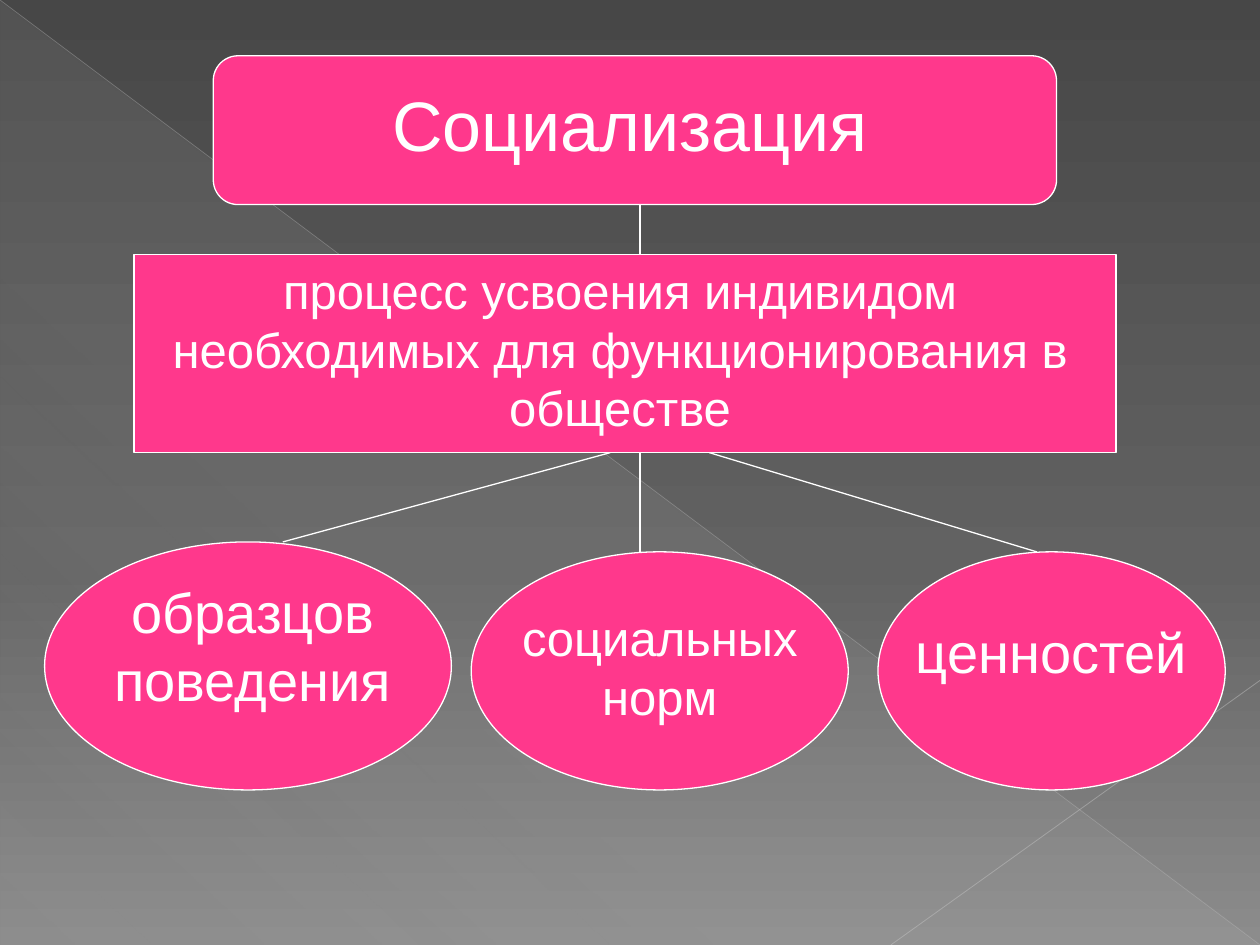
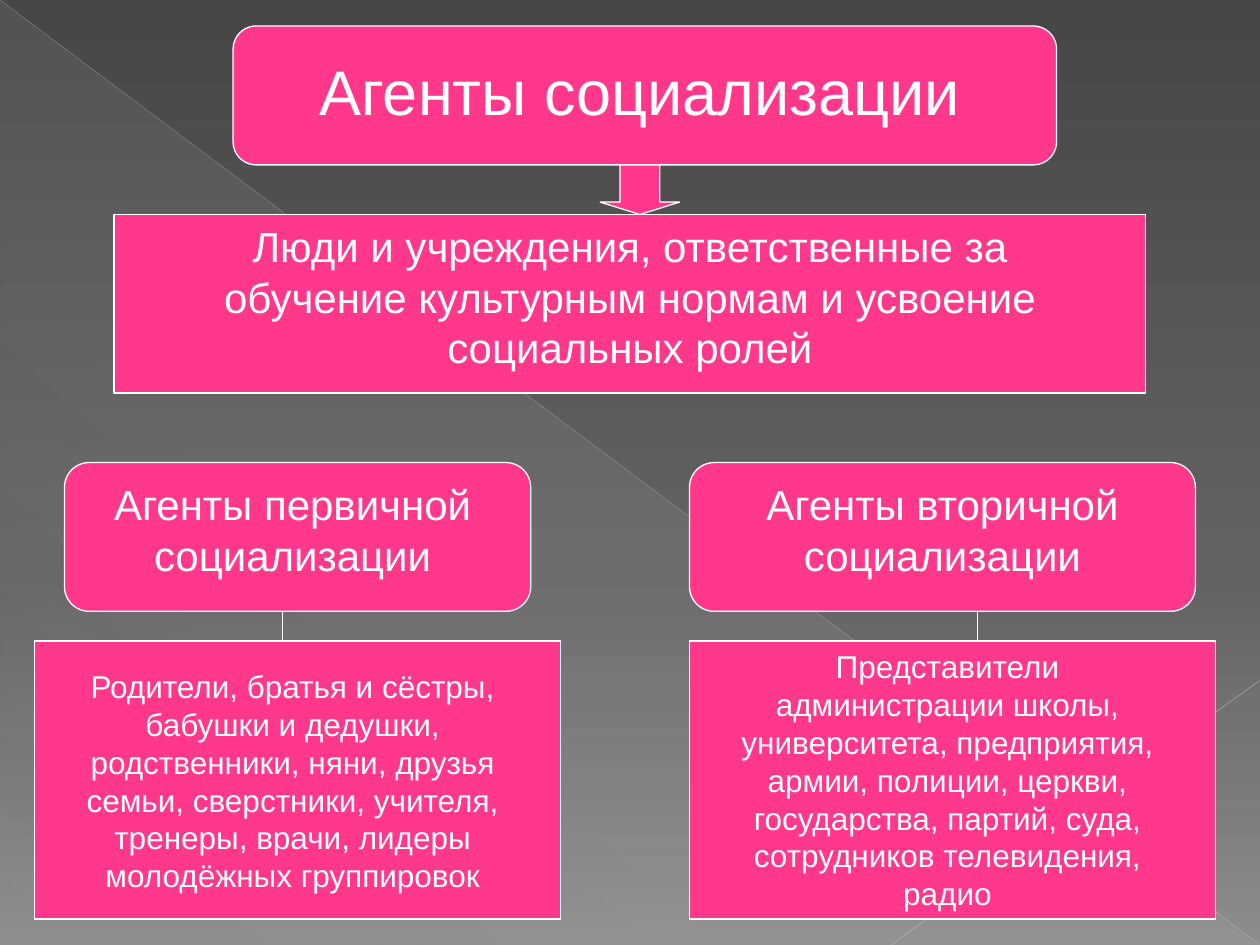
from lxml import etree
from pptx import Presentation
from pptx.dml.color import RGBColor
from pptx.enum.shapes import MSO_CONNECTOR, MSO_SHAPE
from pptx.enum.text import PP_ALIGN
from pptx.oxml.ns import qn
from pptx.util import Inches, Mm, Pt

RECTANGLE = MSO_SHAPE.RECTANGLE
ROUNDED = MSO_SHAPE.ROUNDED_RECTANGLE
ELLIPSE = MSO_SHAPE.OVAL
DOWN_ARROW = MSO_SHAPE.DOWN_ARROW
TRIANGLE = MSO_SHAPE.RIGHT_TRIANGLE
STRAIGHT = MSO_CONNECTOR.STRAIGHT
CENTER = PP_ALIGN.CENTER

PINK = RGBColor(0xFF, 0x38, 0x8C)
WHITE = RGBColor(0xFF, 0xFF, 0xFF)
DARK_GRAY = RGBColor(0x47, 0x47, 0x47)
MID_GRAY = RGBColor(0x62, 0x62, 0x62)
LIGHT_GRAY = RGBColor(0x8C, 0x8C, 0x8C)
HAZE = RGBColor(0xD2, 0xD2, 0xD2)
LONG_RAY = RGBColor(0xBF, 0xBF, 0xBF)
SHORT_RAY = RGBColor(0xC6, 0xC6, 0xC6)

FONT = "Arial"
LINE_HEIGHT = 1.2
LINE_WIDTH = 0.75
WIDTH, HEIGHT = Inches(10), Inches(7.5)
CELL = Mm(2)  # grid cell; column 0 and row 0 meet at the slide's centre

# Gradient stops: position %, colour, opacity %
BACKDROP = [(0, DARK_GRAY, 100), (60, MID_GRAY, 100), (100, LIGHT_GRAY, 100)]
HAZE_STOPS = [(0, HAZE, 10), (70, HAZE, 8), (100, HAZE, 1)]

# Rays: start and end as shares of the slide, colour, width, opacity %
RAYS = [
    ((0, 0), (1, 1), LONG_RAY, 0.39, 35),
    ((1, 0.72), (0.707, 1), SHORT_RAY, 0.47, 45),
]

# Boxes: kind, (column, row, columns, rows), then the label or None:
# text, size, (columns in, rows down, columns, rows)
SLIDES = [
    {
        "boxes": [
            (ROUNDED, (-42, -42, 85, 15),
             ("Социализация", 40, (1.5, 2, 81, 10))),
            (RECTANGLE, (-50, -22, 99, 20),
             ("процесс усвоения индивидом необходимых для "
              "функционирования в обществе", 28, (2, 0, 94, 19))),
            (ELLIPSE, (-59, 7, 41, 25),
             ("образцов поведения", 32, (3, 3, 36, 15))),
            (ELLIPSE, (-16, 8, 38, 24),
             ("социальных норм", 28, (3, 5, 32, 13))),
            (ELLIPSE, (25, 8, 35, 24),
             ("ценностей", 32, (2, 6, 31, 8))),
        ],
        "links": [
            ((1, -27), (1, -22)),
            ((-2, -2), (-35, 7)),
            ((1, -2), (1, 8)),
            ((8, -2), (41, 8)),
        ],
    },
    {
        "boxes": [
            (ROUNDED, (-40, -45, 83, 14),
             ("Агенты социализации", 36, (3, 2, 76, 9))),
            (RECTANGLE, (-52, -26, 104, 18),
             ("Люди и учреждения, ответственные за обучение культурным "
              "нормам и усвоение социальных ролей", 24, (3, 0, 98, 16.5))),
            (DOWN_ARROW, (-3, -31, 8, 5), None),
            (ROUNDED, (-57, -1, 47, 15),
             ("Агенты первичной социализации", 24, (2, 1, 42, 11.5))),
            (ROUNDED, (6, -1, 51, 15),
             ("Агенты вторичной социализации", 24, (2, 1, 47, 11.5))),
            (RECTANGLE, (-60, 17, 53, 28),
             ("Родители, братья и сёстры, бабушки и дедушки, родственники, "
              "няни, друзья семьи, сверстники, учителя, тренеры, врачи, "
              "лидеры молодёжных группировок", 18, (2, 2, 48, 24))),
            (RECTANGLE, (6, 17, 53, 28),
             ("Представители администрации школы, университета, "
              "предприятия, армии, полиции, церкви, государства, партий, "
              "суда, сотрудников телевидения, радио", 18, (2, 0, 48, 28))),
        ],
        "links": [
            ((-35, 14), (-35, 17)),
            ((35, 14), (35, 17)),
        ],
    },
]


def grid_point(column, row):
    return int(WIDTH / 2 + column * CELL), int(HEIGHT / 2 + row * CELL)


def grid_area(column, row, columns, rows):
    return (*grid_point(column, row), int(columns * CELL), int(rows * CELL))


def share_point(across, down):
    return int(across * WIDTH), int(down * HEIGHT)


def set_opacity(color_element, percent):
    alpha = etree.SubElement(color_element, qn("a:alpha"))
    alpha.set("val", str(percent * 1000))


def set_gradient(owner, fill, stops, angle):
    """Give the fill of owner any number of stops, angle clockwise."""
    fill.gradient()
    gradient = owner.element.find(".//" + qn("a:gradFill"))
    for child in list(gradient):
        gradient.remove(child)
    stop_list = etree.SubElement(gradient, qn("a:gsLst"))
    for position, color, opacity in stops:
        stop = etree.SubElement(stop_list, qn("a:gs"), pos=str(position * 1000))
        color_element = etree.SubElement(stop, qn("a:srgbClr"), val=str(color))
        set_opacity(color_element, opacity)
    etree.SubElement(gradient, qn("a:lin"), ang=str(angle * 60000), scaled="0")


def add_line(slide, start, end, color, width, opacity=100):
    line = slide.shapes.add_connector(STRAIGHT, *start, *end)
    line.line.color.rgb = color
    line.line.width = Pt(width)
    set_opacity(line.element.find(".//" + qn("a:srgbClr")), opacity)
    etree.SubElement(line.element.spPr, qn("a:effectLst"))


def add_scenery(slide):
    """Draw the hazy triangle and the thin rays behind the content."""
    haze = slide.shapes.add_shape(TRIANGLE, 0, 0, WIDTH, HEIGHT)
    haze.shadow.inherit = False
    set_gradient(haze, haze.fill, HAZE_STOPS, 133)
    haze.line.fill.background()
    for start, end, *style in RAYS:
        add_line(slide, share_point(*start), share_point(*end), *style)


def add_box(slide, kind, area):
    box = slide.shapes.add_shape(kind, *grid_area(*area))
    box.shadow.inherit = False
    box.fill.solid()
    box.fill.fore_color.rgb = PINK
    box.line.color.rgb = WHITE
    box.line.width = Pt(LINE_WIDTH)
    if kind == DOWN_ARROW:
        box.adjustments[1] = 0.25


def add_label(slide, box_area, text, size, inset):
    column, row = box_area[:2]
    columns_in, rows_down, columns, rows = inset
    area = grid_area(column + columns_in, row + rows_down, columns, rows)
    frame = slide.shapes.add_textbox(*area).text_frame
    frame.word_wrap = True
    paragraph = frame.paragraphs[0]
    paragraph.alignment = CENTER
    paragraph.line_spacing = Pt(size * LINE_HEIGHT)
    run = paragraph.add_run()
    run.text = text
    run.font.name = FONT
    run.font.size = Pt(size)
    run.font.color.rgb = WHITE


def main():
    presentation = Presentation()
    presentation.slide_width, presentation.slide_height = WIDTH, HEIGHT
    master = presentation.slide_master
    set_gradient(master, master.background.fill, BACKDROP, 90)
    blank = presentation.slide_layouts[6]
    for content in SLIDES:
        slide = presentation.slides.add_slide(blank)
        add_scenery(slide)
        for kind, area, label in content["boxes"]:
            add_box(slide, kind, area)
            if label:
                add_label(slide, area, *label)
        for start, end in content["links"]:
            add_line(slide, grid_point(*start), grid_point(*end), WHITE, LINE_WIDTH)
    presentation.save("out.pptx")


if __name__ == "__main__":
    main()
